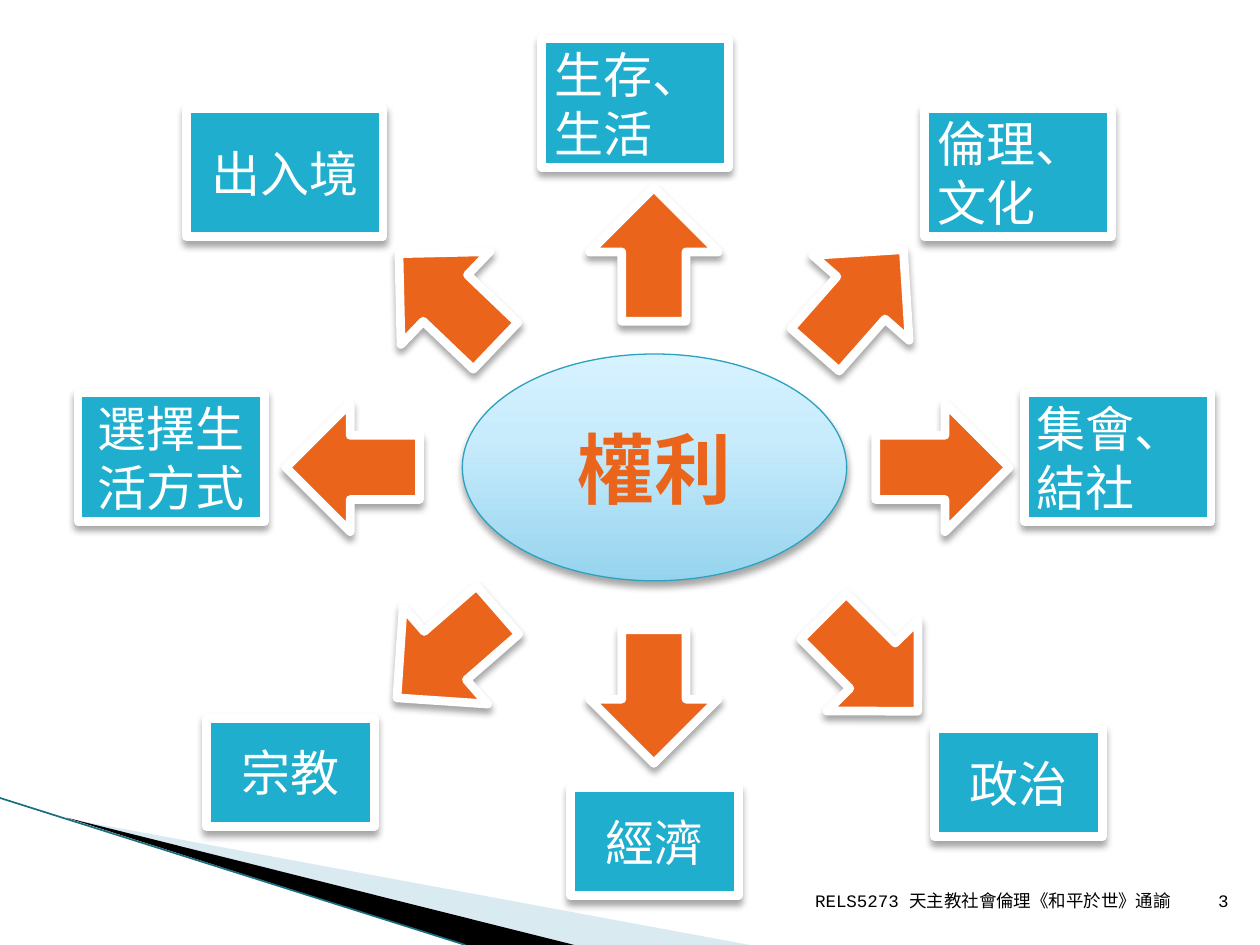
from copy import deepcopy
from dataclasses import dataclass

from lxml.etree import SubElement
from pptx import Presentation
from pptx.dml.color import RGBColor
from pptx.enum.shapes import MSO_CONNECTOR, MSO_SHAPE
from pptx.enum.text import MSO_ANCHOR, PP_ALIGN
from pptx.oxml.ns import qn
from pptx.util import Pt

COLORS = {
    "label": "1FAECD",
    "arrow": "EB641B",
    "white": "FFFFFF",
    "black": "000000",
    "oval_line": "2DA2BF",
    "pale_wedge": "A0CBDC",
    "edge": "1A6E82",
}
OVAL_STOPS = [(0, "96D4EE"), (0.65, "C9ECFC"), (1, "D7F2FF")]
FONT = "Courier New"
ARROW_SIZE = (76.3, 73.4)
WIDE = (106.6, 73.4)
SMALL = (95.8, 61.9)


@dataclass(frozen=True)
class Right:
    """A label around the oval and the arrow that points to it."""
    text: str
    corner: tuple[float, float]
    size: tuple[float, float]
    arrow_corner: tuple[float, float]
    angle: float
    align: PP_ALIGN = PP_ALIGN.CENTER


RIGHTS = [
    Right("生存、生活", (309.6, 22.3), WIDE, (335.5, 108.7), 270, PP_ALIGN.LEFT),
    Right("倫理、文化", (528.5, 61.9), WIDE, (452.9, 134.6), 311.4, PP_ALIGN.LEFT),
    Right("集會、結社", (585.4, 224.6), WIDE, (500.4, 230.4), 0, PP_ALIGN.LEFT),
    Right("政治", (534.2, 416.2), SMALL, (459.4, 342.7), 45.1),
    Right("經濟", (326.2, 450), SMALL, (335.5, 361.4), 90),
    Right("宗教", (118.1, 410.4), SMALL, (217.4, 337), 138.9),
    Right("選擇生活方式", (44.6, 224.6), WIDE, (163.4, 230.4), 180),
    Right("出入境", (106.6, 61.9), (112.3, 73.4), (217.4, 134.6), 223.7),
]


def rgb(name: str) -> RGBColor:
    return RGBColor.from_string(COLORS[name])


def write(shape, text: str, *, size: float, color: str, bold: bool = False,
          align: PP_ALIGN = PP_ALIGN.CENTER,
          anchor: MSO_ANCHOR = MSO_ANCHOR.MIDDLE) -> None:
    frame = shape.text_frame
    frame.word_wrap = True
    frame.vertical_anchor = anchor
    paragraph = frame.paragraphs[0]
    paragraph.alignment = align
    run = paragraph.add_run()
    run.text = text
    run.font.name = FONT
    run.font.size = Pt(size)
    run.font.bold = bold
    run.font.color.rgb = rgb(color)


def add_shadow(shape) -> None:
    shape.shadow.inherit = False
    effects = shape._element.spPr.find(qn("a:effectLst"))
    shadow = SubElement(effects, qn("a:outerShdw"), blurRad=str(Pt(4)),
                        dist=str(Pt(3)), dir="5400000", rotWithShape="0")
    color = SubElement(shadow, qn("a:srgbClr"), val=COLORS["black"])
    SubElement(color, qn("a:alpha"), val="35000")


def add_card(slide, kind: MSO_SHAPE, corner: tuple[float, float],
             size: tuple[float, float], fill: str):
    """Filled shape with a thick white border and a soft shadow."""
    card = slide.shapes.add_shape(kind, *map(Pt, corner + size))
    card.fill.solid()
    card.fill.fore_color.rgb = rgb(fill)
    card.line.color.rgb = rgb("white")
    card.line.width = Pt(5)
    add_shadow(card)
    return card


def add_right(slide, right: Right) -> None:
    arrow = add_card(slide, MSO_SHAPE.RIGHT_ARROW, right.arrow_corner,
                     ARROW_SIZE, "arrow")
    arrow.rotation = right.angle
    label = add_card(slide, MSO_SHAPE.RECTANGLE, right.corner, right.size, "label")
    write(label, right.text, size=28, color="white", align=right.align)


def add_wedge(slide, points: list[tuple[float, float]], fill: str,
              opacity: int = 100) -> None:
    start, *rest = [(Pt(x), Pt(y)) for x, y in points]
    builder = slide.shapes.build_freeform(*start)
    builder.add_line_segments(rest, close=True)
    wedge = builder.convert_to_shape()
    wedge.shadow.inherit = False
    wedge.fill.solid()
    wedge.fill.fore_color.rgb = rgb(fill)
    wedge.line.fill.background()
    if opacity < 100:
        color = wedge._element.spPr.find(qn("a:solidFill"))[0]
        SubElement(color, qn("a:alpha"), val=str(opacity * 1000))


def add_edge(slide) -> None:
    edge = slide.shapes.add_connector(
        MSO_CONNECTOR.STRAIGHT, Pt(0), Pt(456), Pt(266), Pt(540))
    edge.line.color.rgb = rgb("edge")
    edge.line.width = Pt(0.95)
    SubElement(edge._element.spPr, qn("a:effectLst"))


def add_oval(slide) -> None:
    oval = slide.shapes.add_shape(
        MSO_SHAPE.OVAL, Pt(264.2), Pt(202.3), Pt(219.6), Pt(129.6))
    oval.fill.gradient()
    oval.fill.gradient_angle = 90
    stop_list = oval._element.spPr.find(qn("a:gradFill")).find(qn("a:gsLst"))
    stop_list.append(deepcopy(stop_list[-1]))
    for stop, (position, color) in zip(oval.fill.gradient_stops, OVAL_STOPS):
        stop.position = position
        stop.color.rgb = RGBColor.from_string(color)
    oval.line.color.rgb = rgb("oval_line")
    oval.line.width = Pt(0.75)
    add_shadow(oval)
    write(oval, "權利", size=44, color="arrow", bold=True)


def add_footer(slide, text: str, left: float, width: float) -> None:
    footer = slide.shapes.add_textbox(Pt(left), Pt(495.4), Pt(width), Pt(28.8))
    write(footer, text, size=10, color="black", align=PP_ALIGN.RIGHT,
          anchor=MSO_ANCHOR.BOTTOM)


def main() -> None:
    deck = Presentation()
    deck.slide_width, deck.slide_height = Pt(720), Pt(540)
    slide = deck.slides.add_slide(deck.slide_layouts[6])

    # Corner decoration
    add_wedge(slide, [(39.6, 468), (428.4, 540), (328.3, 540)], "pale_wedge", 40)
    add_wedge(slide, [(38.2, 467.3), (328.3, 540), (266, 540)], "black")
    add_edge(slide)

    # Central idea and the rights around it
    add_oval(slide)
    for right in RIGHTS:
        add_right(slide, right)

    # Footer and page number
    add_footer(slide, "RELS5273 天主教社會倫理《和平於世》通諭", 450, 226.1)
    add_footer(slide, "3", 680.4, 28.8)

    deck.save("out.pptx")


if __name__ == "__main__":
    main()
